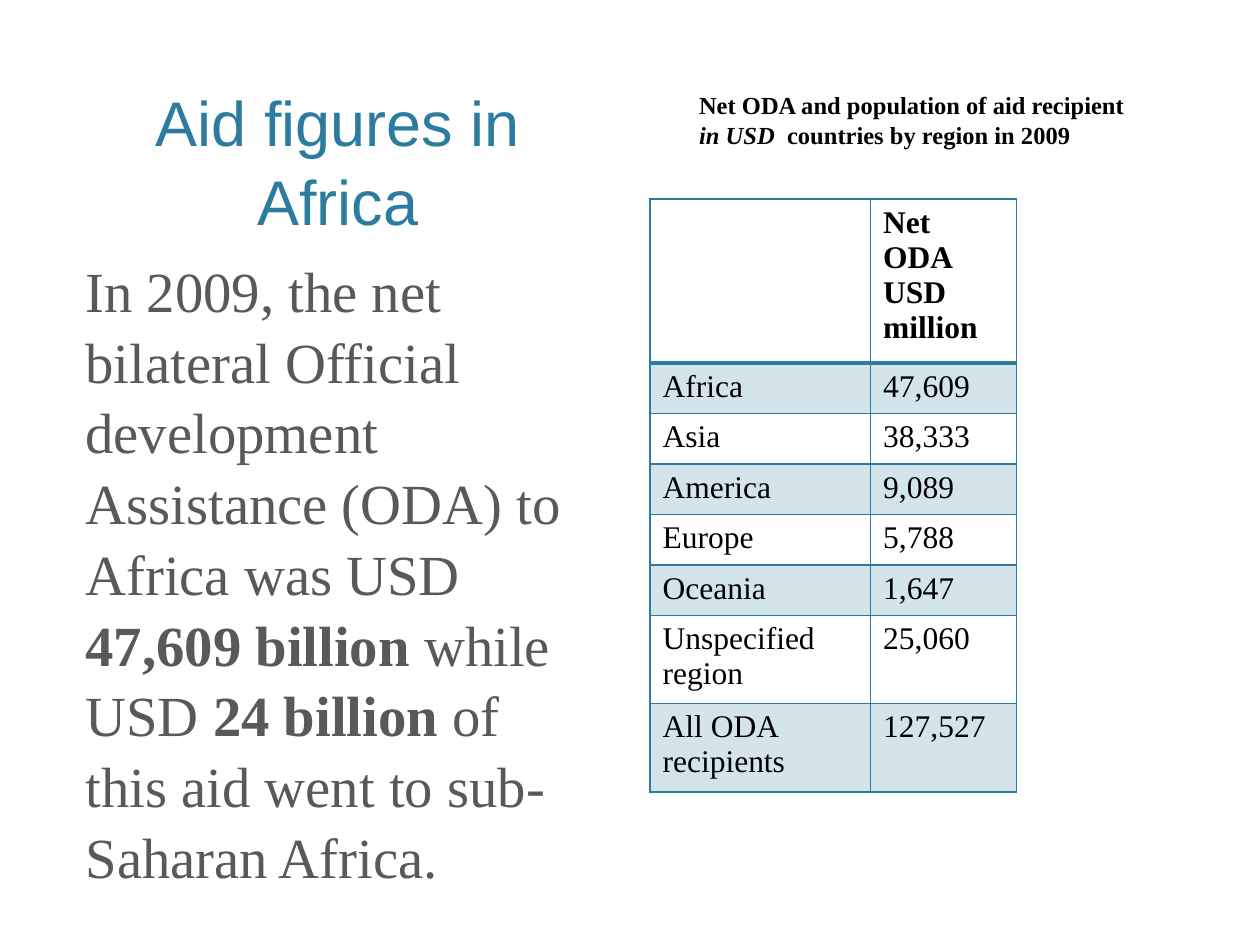
import pptx
import pptx.dml.color
import pptx.enum.text
import pptx.oxml
import pptx.oxml.ns
import pptx.util
from lxml import etree

Pt = pptx.util.Pt
ALIGN = pptx.enum.text.PP_ALIGN
ANCHOR = pptx.enum.text.MSO_ANCHOR

COLORS = {"teal": "2C7C9F", "grey": "595959", "black": "000000"}
SERIF = "Times New Roman"
BAND_ALPHA = 20000
COLUMN_WIDTHS = (126, 83.5)
HEADER_HEIGHT, LINE_ROW_HEIGHT, TWO_LINE_ROW_HEIGHT = 75, 27.7, 48.5

ODA_ROWS = [
    ("", "Net ODA USD million"),
    ("Africa", "47,609"),
    ("Asia", "38,333"),
    ("America", "9,089"),
    ("Europe", "5,788"),
    ("Oceania", "1,647"),
    ("Unspecified region", "25,060"),
    ("All ODA recipients", "127,527"),
]


def rgb(color):
    return pptx.dml.color.RGBColor.from_string(COLORS[color])


def add_run(paragraph, text, size, color, font=SERIF, bold=False, italic=False):
    run = paragraph.add_run()
    run.text = text
    run.font.name = font
    run.font.size = Pt(size)
    run.font.bold = bold
    run.font.italic = italic
    run.font.color.rgb = rgb(color)


def add_text_frame(slide, left, top, width, height, anchor=ANCHOR.TOP):
    frame = slide.shapes.add_textbox(Pt(left), Pt(top), Pt(width), Pt(height)).text_frame
    frame.word_wrap = True
    frame.vertical_anchor = anchor
    return frame


def set_borders(cell, bottom_widths):
    """Outline a cell in teal; bottom_widths maps a side to a width other than 1 pt."""
    properties = cell._tc.get_or_add_tcPr()
    for side in ("L", "R", "T", "B"):
        width = Pt(bottom_widths.get(side, 1))
        properties.append(pptx.oxml.parse_xml(
            f'<a:ln{side} {pptx.oxml.ns.nsdecls("a")} w="{width}"><a:solidFill>'
            f'<a:srgbClr val="{COLORS["teal"]}"/></a:solidFill></a:ln{side}>'))


def fill_cell(cell, banded):
    if not banded:
        cell.fill.background()
        return
    cell.fill.solid()
    cell.fill.fore_color.rgb = rgb("teal")
    tint = cell._tc.tcPr.find(
        f'{pptx.oxml.ns.qn("a:solidFill")}/{pptx.oxml.ns.qn("a:srgbClr")}')
    etree.SubElement(tint, pptx.oxml.ns.qn("a:alpha"), val=str(BAND_ALPHA))


def add_oda_table(slide):
    heights = [HEADER_HEIGHT] + [LINE_ROW_HEIGHT] * 5 + [TWO_LINE_ROW_HEIGHT] * 2
    table = slide.shapes.add_table(
        len(ODA_ROWS), len(COLUMN_WIDTHS), Pt(371.5), Pt(113.8),
        Pt(sum(COLUMN_WIDTHS)), Pt(sum(heights))).table
    table.first_row = False
    table.horz_banding = False
    for column, width in zip(table.columns, COLUMN_WIDTHS):
        column.width = Pt(width)

    for row_index, (height, values) in enumerate(zip(heights, ODA_ROWS)):
        table.rows[row_index].height = Pt(height)
        for column_index, value in enumerate(values):
            cell = table.cell(row_index, column_index)
            if value:
                add_run(cell.text_frame.paragraphs[0], value, 18, "black",
                        bold=row_index == 0)
            # The rule between header and body is heavier
            heavy_side = {0: {"B": 2}, 1: {"T": 2}}.get(row_index, {})
            set_borders(cell, heavy_side)
            fill_cell(cell, banded=row_index % 2 == 1)


def add_title(slide):
    title = add_text_frame(slide, 41.8, 48.2, 302.4, 91.4, ANCHOR.BOTTOM).paragraphs[0]
    title.alignment = ALIGN.CENTER
    title.line_spacing = 1.05
    add_run(title, "Aid figures in Africa", 36, "teal", font="Arial")


def add_body(slide):
    body = add_text_frame(slide, 41.8, 141.1, 302.4, 293).paragraphs[0]
    body.space_before = Pt(6)
    body.line_spacing = 1.04
    for text, bold in (
        ("In 2009, the net bilateral Official development Assistance (ODA) "
         "to Africa was USD ", False),
        ("47,609 billion", True),
        (" while USD ", False),
        ("24 billion ", True),
        ("of this aid went to sub-Saharan Africa.", False),
    ):
        add_run(body, text, 32.4, "grey", bold=bold)


def add_table_caption(slide):
    caption = add_text_frame(slide, 392.4, 48.2, 292.3, 41)
    add_run(caption.paragraphs[0], "Net ODA and population of aid recipient",
            14, "black", bold=True)
    second_line = caption.add_paragraph()
    add_run(second_line, "in USD  ", 14, "black", bold=True, italic=True)
    add_run(second_line, "countries by region in 2009", 14, "black", bold=True)


def main():
    presentation = pptx.Presentation()
    presentation.slide_width = Pt(720)
    presentation.slide_height = Pt(540)
    slide = presentation.slides.add_slide(presentation.slide_layouts[6])

    # Left half: message
    add_title(slide)
    add_body(slide)

    # Right half: figures by region
    add_oda_table(slide)
    add_table_caption(slide)

    presentation.save("out.pptx")


if __name__ == "__main__":
    main()
